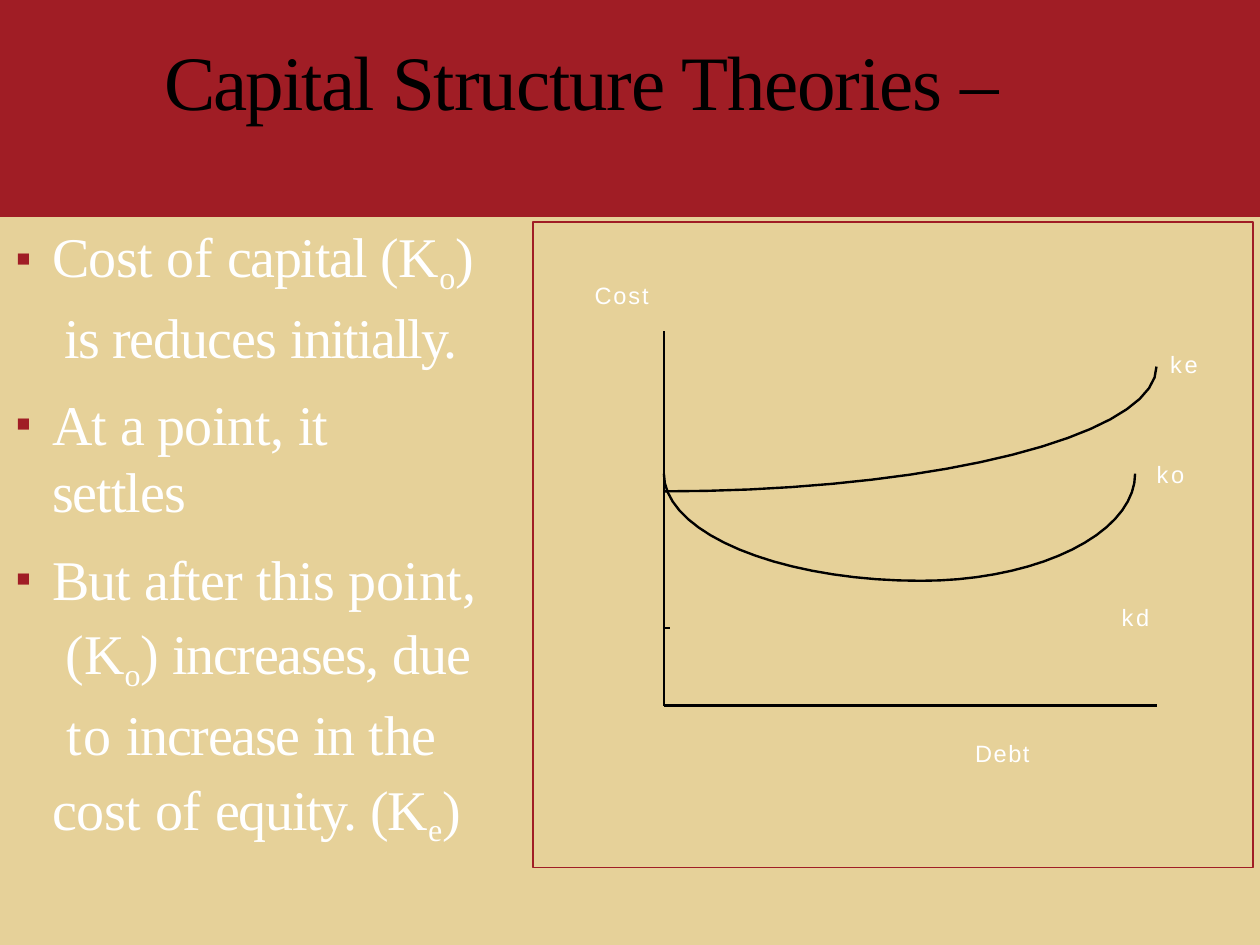
from dataclasses import dataclass
from math import cos, pi, sin

from lxml.etree import SubElement
from pptx import Presentation
from pptx.dml.color import RGBColor
from pptx.enum.shapes import MSO_CONNECTOR as CONN, MSO_SHAPE as SHAPE
from pptx.enum.text import PP_ALIGN as ALIGN
from pptx.oxml.ns import qn
from pptx.util import Pt

RED = RGBColor(0xA0, 0x1D, 0x25)
SAND = RGBColor(0xE6, 0xD1, 0x99)
WHITE = RGBColor(0xFF, 0xFF, 0xFF)
BLACK = RGBColor(0x00, 0x00, 0x00)
SERIF, SANS = "Times New Roman", "Arial"
LINE_W = 1.35

Points = list[tuple[float, float]]


@dataclass
class Run:
    text: str
    spc: float = 0
    sub: bool = False


@dataclass
class Bullet:
    before: float
    spacing: float
    lines: list[list[Run]]


@dataclass
class Label:
    text: str
    x: float
    y: float
    spc: float


@dataclass
class Arc:
    """Lower quarter of an ellipse; a negative rx is the left quarter."""
    cx: float
    cy: float
    rx: float
    ry: float


TITLE = [Run("Capital ", -1.15), Run("Structure Theories ", -0.65), Run("–", -0.1)]

BULLETS = [
    Bullet(1.4, 1.1, [
        [Run("Cost ", -0.3), Run("of ", -0.1), Run("capital ", -0.8),
         Run("(K", -0.4), Run("o", -0.6, True), Run(")", -0.4)],
        [Run(" is ", -1), Run("reduces ", -0.6), Run("initially.", -1.1)]]),
    Bullet(11.6, 1, [
        [Run("At ", -0.6), Run("a ", -1.2), Run("point, ", -0.2), Run("it", -0.6)],
        [Run("settles", -0.6)]]),
    Bullet(7.7, 1.1, [
        [Run("But ", -0.6), Run("after ", -0.5), Run("this ", -0.4), Run("point,", -0.2)],
        [Run(" (K", -0.2), Run("o", -0.6, True), Run(") ", -0.4),
         Run("increases, ", -0.8), Run("due", -0.4)],
        [Run(" to ", 0.4), Run("increase ", -0.8), Run("in ", -0.6), Run("the", -0.1)],
        [Run("cost ", -0.2), Run("of ", -0.1), Run("equity. ", -0.8),
         Run("(K", -0.7), Run("e", -1, True), Run(")", -0.7)]]),
]

LABELS = [
    Label("Cost", 339.8, 160.4, 1.1),
    Label("ke", 668.6, 200, 1.6),
    Label("ko", 661, 262.8, 1.6),
    Label("kd", 641, 344.5, 1.6),
    Label("Debt", 557.3, 422.4, 0.9),
]

# Axis origin, inner ends and outer ends
X0, Y0 = 379.4, 403.2
X_MID, Y_MID = 648.7, 209.5
X_END, Y_END = 661, 189.4
KE = Arc(X0, 209.5, 281.5, 71.3)
KO_FALL = Arc(526.3, 270.7, -146.9, 61.2)
KO_RISE = Arc(526.3, 270.7, 122.4, 61.2)


def add_rect(s, x: float, y: float, w: float, h: float, fill=None, line=None):
    sp = s.shapes.add_shape(SHAPE.RECTANGLE, Pt(x), Pt(y), Pt(w), Pt(h))
    sp.shadow.inherit = False
    if fill is None:
        sp.fill.background()
    else:
        sp.fill.solid()
        sp.fill.fore_color.rgb = fill
    if line is None:
        sp.line.fill.background()
    else:
        sp.line.color.rgb = line
        sp.line.width = Pt(1)


def add_box(s, x: float, y: float, w: float, h: float, wrap: bool = True):
    tf = s.shapes.add_textbox(Pt(x), Pt(y), Pt(w), Pt(h)).text_frame
    tf.word_wrap = wrap
    tf.margin_left = tf.margin_right = tf.margin_top = tf.margin_bottom = 0
    return tf


def add_run(p, run: Run, size: float, font: str, color: RGBColor) -> None:
    r = p.add_run()
    r.text = run.text
    r.font.size, r.font.name = Pt(size), font
    r.font.color.rgb = color
    rpr = r.font._element
    rpr.set("spc", str(round(run.spc * 100)))
    if run.sub:
        rpr.set("baseline", "-21000")


def add_bullet(p, bullet: Bullet) -> None:
    p.space_before, p.line_spacing = Pt(bullet.before), bullet.spacing
    ppr = p._p.get_or_add_pPr()
    ppr.set("marL", str(Pt(23.8)))
    ppr.set("indent", str(-Pt(20.9)))
    SubElement(SubElement(ppr, qn("a:buClr")), qn("a:srgbClr")).set("val", str(RED))
    SubElement(ppr, qn("a:buSzPct")).set("val", "80000")
    SubElement(ppr, qn("a:buFont")).set("typeface", SANS)
    SubElement(ppr, qn("a:buChar")).set("char", "▪")
    for i, line in enumerate(bullet.lines):
        if i:
            p.add_line_break()
        for run in line:
            add_run(p, run, 31.5 if run.sub else 32, SERIF, WHITE)


def add_line(s, x1: float, y1: float, x2: float, y2: float) -> None:
    c = s.shapes.add_connector(CONN.STRAIGHT, Pt(x1), Pt(y1), Pt(x2), Pt(y2))
    c.line.color.rgb, c.line.width = BLACK, Pt(LINE_W)
    SubElement(c._element.spPr, qn("a:effectLst"))


def arc_points(arc: Arc, steps: int = 18) -> Points:
    angles = [pi / 2 * i / steps for i in range(steps + 1)]
    return [(arc.cx + arc.rx * sin(t), arc.cy + arc.ry * cos(t)) for t in angles]


def add_strokes(s, strokes: list[Points]) -> None:
    """Draw several open lines as one outline."""
    paths = [[(Pt(x), Pt(y)) for x, y in stroke] for stroke in strokes]
    fb = s.shapes.build_freeform(*paths[0][0])
    for i, path in enumerate(paths):
        if i:
            fb.move_to(*path[0])
        fb.add_line_segments(path[1:], close=False)
    sp = fb.convert_to_shape()
    sp.shadow.inherit = False
    sp.fill.background()
    sp.line.color.rgb, sp.line.width = BLACK, Pt(LINE_W)


def main() -> None:
    prs = Presentation()
    prs.slide_width, prs.slide_height = Pt(720), Pt(540)
    s = prs.slides.add_slide(prs.slide_layouts[6])

    # Body and title bands
    add_rect(s, 0, 124, 720, 416, fill=SAND)
    add_rect(s, 0, 0, 720, 124, fill=RED)

    # Title
    p = add_box(s, 12.2, 18.9, 640.8, 54).paragraphs[0]
    p.alignment = ALIGN.CENTER
    for run in TITLE:
        add_run(p, run, 44, SERIF, BLACK)

    # Graph: axes with the ko curve, axis ends with the ke curve, tick
    ko = arc_points(KO_FALL)[::-1] + arc_points(KO_RISE)[1:]
    add_strokes(s, [[(X0, Y_MID), (X0, Y0)], [(X0, Y0), (X_MID, Y0)], ko])
    add_strokes(s, [arc_points(KE), [(X_MID, Y0), (X_END, Y0)],
                    [(X0, Y_MID), (X0, Y_END)]])
    add_line(s, X0, 359, X0 + 3.5, 359)

    # Frame and labels
    add_rect(s, 304.6, 126.8, 411.5, 369, line=RED)
    for label in LABELS:
        p = add_box(s, label.x, label.y, 36, 16, wrap=False).paragraphs[0]
        add_run(p, Run(label.text, label.spc), 13.5, SANS, WHITE)

    # Bullets
    tf = add_box(s, 6, 122.4, 270, 313)
    for i, bullet in enumerate(BULLETS):
        add_bullet(tf.add_paragraph() if i else tf.paragraphs[0], bullet)

    prs.save("out.pptx")


if __name__ == "__main__":
    main()
